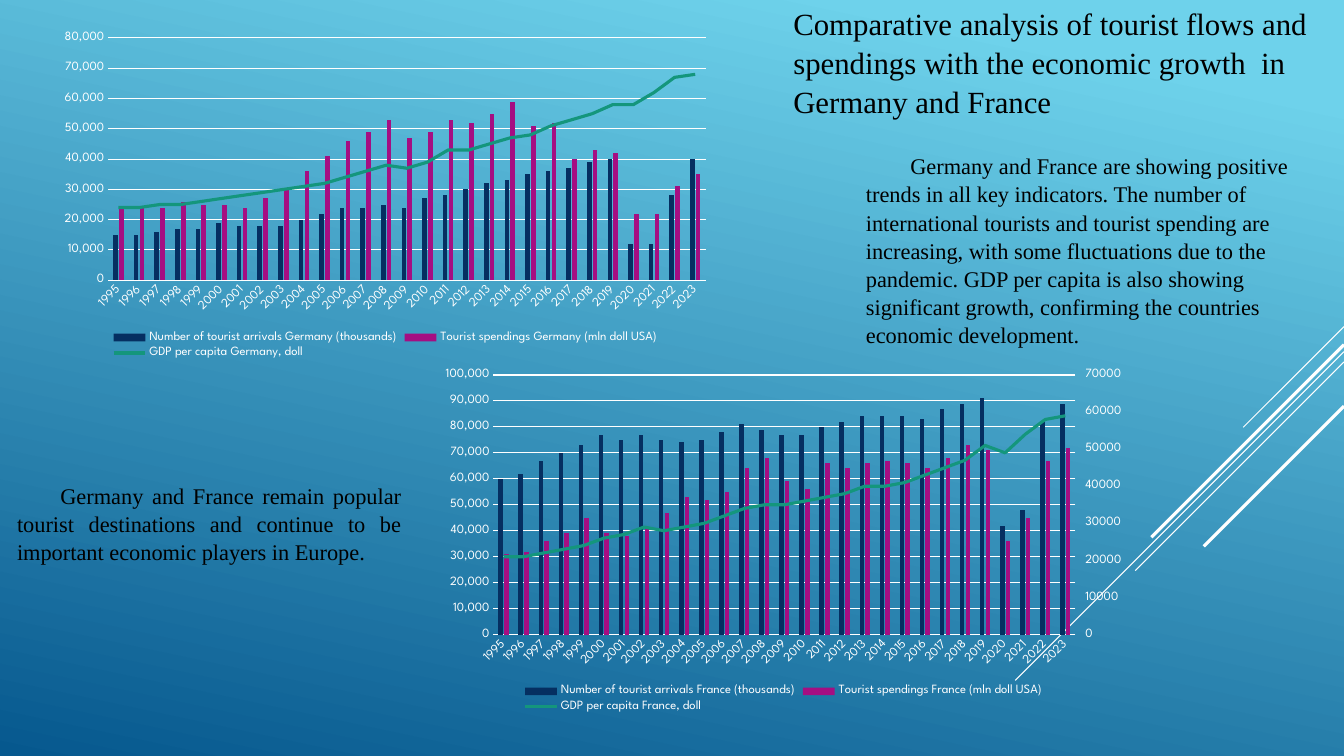
"""Build a slide comparing tourism and economic growth in Germany and France."""
from pptx import Presentation
from pptx.chart.data import CategoryChartData
from pptx.dml.color import RGBColor
from pptx.enum.chart import XL_CHART_TYPE, XL_LEGEND_POSITION, XL_MARKER_STYLE, XL_TICK_MARK
from pptx.enum.shapes import MSO_CONNECTOR
from pptx.enum.text import PP_ALIGN
from pptx.oxml import parse_xml
from pptx.oxml.ns import nsdecls, qn
from pptx.util import Inches, Pt

COLOURS = {"sky": "6ED2EB", "deep": "06588E", "white": "FFFFFF", "black": "000000",
           "arrivals": "052F61", "spendings": "A50E82", "income": "14967C"}
PALETTE = {name: RGBColor.from_string(code) for name, code in COLOURS.items()}

deck = Presentation()
deck.slide_width, deck.slide_height = Inches(13.33), Inches(7.5)


def across(percent):
    """Return a share of the slide's width."""
    return int(deck.slide_width * percent / 100)


def down(percent):
    """Return a share of the slide's height."""
    return int(deck.slide_height * percent / 100)


page = deck.slides.add_slide(deck.slide_layouts[6])
backdrop = page.background.fill
backdrop.gradient()
backdrop.gradient_angle = 258
for stop, name, position in zip(backdrop.gradient_stops, ("sky", "deep"), (0.1, 1)):
    stop.color.rgb = PALETTE[name]
    stop.position = position

for start, run, weight in [(43.2, 7.5, 0.75), (46.53, 24.46, 0.75), (47.87, 15.53, 0.75),
                           (45.6, 14.33, 2.25), (53.73, 10.43, 2.25)]:
    stripe = page.shapes.add_connector(
        MSO_CONNECTOR.STRAIGHT, across(100), down(start),
        across(100 - run), down(start) + across(run))
    stripe.line.color.rgb = PALETTE["white"]
    stripe.line.width = Pt(weight)
    stripe._element.spPr.append(parse_xml(f"<a:effectLst {nsdecls('a')}/>"))

YEARS = [str(year) for year in range(1995, 2024)]
CHARTS = [
    {"country": "France", "frame": (32.11, 47.87, 52.36, 46.93), "top": 100000,
     "second_top": 70000, "plot": (0.088, 0.037, 0.827, 0.732),
     "arrivals": [60, 62, 67, 70, 73, 77, 75, 77, 75, 74, 75, 78, 81, 79, 77, 77, 80, 82,
                  84, 84, 84, 83, 87, 89, 91, 42, 48, 82, 89],
     "spendings": [31, 32, 36, 39, 45, 39, 38, 41, 47, 53, 52, 55, 64, 68, 59, 56, 66, 64,
                   66, 67, 66, 64, 68, 73, 71, 36, 45, 67, 72],
     "income": [21, 21, 22, 23, 24, 26, 27, 29, 28, 29, 30, 32, 34, 35, 35, 36, 37, 38,
                40, 40, 41, 43, 45, 47, 51, 49, 54, 58, 59]},
    {"country": "Germany", "frame": (3.83, 3.47, 49.66, 44.53), "top": 80000,
     "second_top": None, "plot": (0.085, 0.035, 0.895, 0.72),
     "arrivals": [15, 15, 16, 17, 17, 19, 18, 18, 18, 20, 22, 24, 24, 25, 24, 27, 28, 30,
                  32, 33, 35, 36, 37, 39, 40, 12, 12, 28, 40],
     "spendings": [24, 24, 24, 26, 25, 25, 24, 27, 30, 36, 41, 46, 49, 53, 47, 49, 53, 52,
                   55, 59, 51, 52, 40, 43, 42, 22, 22, 31, 35],
     "income": [24, 24, 25, 25, 26, 27, 28, 29, 30, 31, 32, 34, 36, 38, 37, 39, 43, 43,
                45, 47, 48, 51, 53, 55, 58, 58, 62, 67, 68]},
]
MEASURES = {"arrivals": "Number of tourist arrivals {} (thousands)",
            "spendings": "Tourist spendings {} (mln doll USA)",
            "income": "GDP per capita {}, doll"}

for entry in CHARTS:
    table = CategoryChartData(number_format="#,##0")
    table.categories = YEARS
    for measure, label in MEASURES.items():
        table.add_series(label.format(entry["country"]),
                         [1000 * value for value in entry[measure]])
    left, top, width, height = entry["frame"]
    chart = page.shapes.add_chart(
        XL_CHART_TYPE.COLUMN_CLUSTERED, across(left), down(top),
        across(width), down(height), table).chart
    chart.has_title = False
    chart.has_legend = True
    chart.legend.position = XL_LEGEND_POSITION.BOTTOM
    chart.legend.include_in_layout = False
    years, values = chart.category_axis, chart.value_axis
    for font in (chart.font, chart.legend.font, years.tick_labels.font, values.tick_labels.font):
        font.name, font.size = "League Spartan", Pt(9)
        font.color.rgb = PALETTE["white"]
    for axis in (years, values):
        axis.major_tick_mark = axis.minor_tick_mark = XL_TICK_MARK.NONE
    for rule in (years.format.line, values.major_gridlines.format.line):
        rule.color.rgb = PALETTE["white"]
        rule.width = Pt(0.75)
    years._element.find(qn("c:txPr")).find(qn("a:bodyPr")).set("rot", "-2700000")
    values.format.line.fill.background()
    for name, value in {"minimum_scale": 0, "maximum_scale": entry["top"],
                        "major_unit": 10000}.items():
        setattr(values, name, value)
    values.tick_labels.number_format = "#,##0"
    values.tick_labels.number_format_is_linked = False

    columns = chart.plots[0]
    for name, value in {"gap_width": 219, "overlap": -27, "vary_by_categories": False}.items():
        setattr(columns, name, value)
    area = chart._chartSpace.find(".//" + qn("c:plotArea"))
    bars = area.find(qn("c:barChart"))
    axis_ids = [item.get("val") for item in bars.findall(qn("c:axId"))]
    if entry["second_top"]:
        axis_ids = ["3001", "3002"]
        first_axis = area.find(qn("c:valAx"))
        first_axis.addnext(parse_xml(
            f'<c:catAx {nsdecls("c")}><c:axId val="3001"/>'
            '<c:scaling><c:orientation val="minMax"/></c:scaling><c:delete val="1"/>'
            '<c:axPos val="b"/><c:crossAx val="3002"/></c:catAx>'))
        first_axis.addnext(parse_xml(
            f'<c:valAx {nsdecls("c", "a")}><c:axId val="3002"/>'
            f'<c:scaling><c:orientation val="minMax"/><c:max val="{entry["second_top"]}"/>'
            '<c:min val="0"/></c:scaling><c:delete val="0"/><c:axPos val="r"/>'
            '<c:numFmt formatCode="General" sourceLinked="0"/><c:majorTickMark val="out"/>'
            '<c:minorTickMark val="none"/><c:tickLblPos val="nextTo"/>'
            '<c:spPr><a:ln><a:noFill/></a:ln></c:spPr>'
            '<c:txPr><a:bodyPr/><a:p><a:pPr><a:defRPr sz="900"><a:solidFill>'
            f'<a:srgbClr val="{COLOURS["white"]}"/></a:solidFill>'
            '<a:latin typeface="League Spartan"/></a:defRPr></a:pPr></a:p></c:txPr>'
            '<c:crossAx val="3001"/><c:crosses val="max"/><c:majorUnit val="10000"/></c:valAx>'))
    trend = parse_xml(
        f'<c:lineChart {nsdecls("c")}><c:grouping val="standard"/><c:varyColors val="0"/>'
        f'<c:marker val="1"/><c:axId val="{axis_ids[0]}"/><c:axId val="{axis_ids[1]}"/>'
        '</c:lineChart>')
    income = bars.findall(qn("c:ser"))[-1]
    for flag in income.findall(qn("c:invertIfNegative")):
        income.remove(flag)
    trend.find(qn("c:varyColors")).addnext(income)
    bars.addnext(trend)

    for series, measure in zip(columns.series, MEASURES):
        series.format.fill.solid()
        series.format.fill.fore_color.rgb = PALETTE[measure]
        series.invert_if_negative = False
    curve = chart.plots[1].series[0]
    curve.smooth = False
    curve.marker.style = XL_MARKER_STYLE.NONE
    curve.format.line.color.rgb = PALETTE["income"]
    curve.format.line.width = Pt(2.25)

    for blank in area.findall(qn("c:layout")):
        area.remove(blank)
    sides = "".join(f'<c:{side} val="{share}"/>' for side, share in zip("xywh", entry["plot"]))
    area.insert(0, parse_xml(
        f'<c:layout {nsdecls("c")}><c:manualLayout><c:layoutTarget val="inner"/>'
        f'<c:xMode val="edge"/><c:yMode val="edge"/>{sides}</c:manualLayout></c:layout>'))

TEXTS = [
    ((58.29, -0.27, 43.44, 16.13), 22, 0, PP_ALIGN.LEFT,
     "Comparative analysis of tourist flows and spendings with the economic growth  in "
     "Germany and France"),
    ((0.53, 62.93, 30.08, 12.13), 16, 0.43, PP_ALIGN.JUSTIFY,
     "Germany and France remain popular tourist destinations and continue to be important "
     "economic players in Europe."),
    ((63.69, 19.33, 35.18, 26.53), 16, 0.44, PP_ALIGN.LEFT,
     "Germany and France are showing positive trends in all key indicators. The number of "
     "international tourists and tourist spending are increasing, with some fluctuations due "
     "to the pandemic. GDP per capita is also showing significant growth, confirming the "
     "countries economic development."),
]
for (left, top, width, height), size, indent, alignment, wording in TEXTS:
    box = page.shapes.add_textbox(across(left), down(top), across(width), down(height))
    box.text_frame.word_wrap = True
    para = box.text_frame.paragraphs[0]
    para.alignment, para.line_spacing = alignment, 1.05
    para._p.get_or_add_pPr().set("indent", str(Inches(indent)))
    span = para.add_run()
    span.text = wording
    for name, value in {"name": "Times New Roman", "size": Pt(size)}.items():
        setattr(span.font, name, value)
    span.font.color.rgb = PALETTE["black"]

deck.save("out.pptx")
